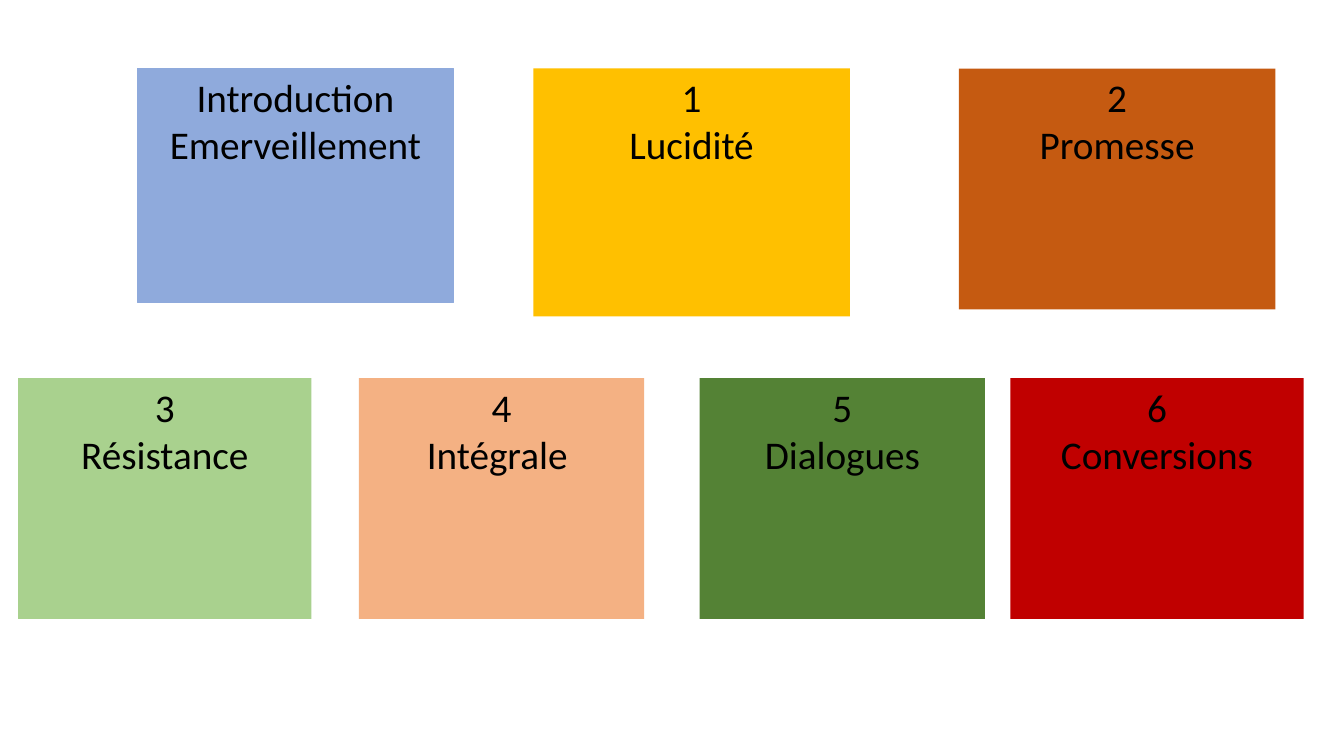
from dataclasses import dataclass

from pptx import Presentation
from pptx.dml.color import RGBColor
from pptx.enum.shapes import MSO_SHAPE
from pptx.enum.text import MSO_ANCHOR, MSO_AUTO_SIZE, PP_ALIGN
from pptx.util import Inches, Pt


@dataclass(frozen=True)
class Theme:
    font: str = "Calibri"
    size: int = 28
    text: str = "000000"
    blue: str = "8FAADC"
    gold: str = "FFC000"
    rust: str = "C55A11"
    mint: str = "A9D18E"
    peach: str = "F4B183"
    green: str = "548235"
    red: str = "C00000"
    outline: float = 0.75


THEME = Theme()
SLIDE_WIDTH, SLIDE_HEIGHT = 13.33, 7.5
BLANK_LAYOUT = 6

# label, title, fill, left, width, height
ROWS = [
    (0.68, [
        ("Introduction", "Emerveillement", THEME.blue, 1.36, 3.14, 2.32),
        ("1", "Lucidité", THEME.gold, 5.29, 3.14, 2.46),
        ("2", "Promesse", THEME.rust, 9.51, 3.14, 2.39),
    ]),
    (3.75, [
        ("3", "Résistance", THEME.mint, 0.18, 2.91, 2.39),
        ("4", "Intégrale ", THEME.peach, 3.56, 2.83, 2.39),
        ("5", "Dialogues", THEME.green, 6.94, 2.83, 2.39),
        ("6", "Conversions", THEME.red, 10.02, 2.91, 2.39),
    ]),
]
OUTLINED = {"Introduction"}


def add_chapter(slide, top, label, title, fill, left, width, height):
    shape = slide.shapes.add_shape(
        MSO_SHAPE.RECTANGLE, Inches(left), Inches(top), Inches(width), Inches(height)
    )
    shape.shadow.inherit = False
    shape.fill.solid()
    shape.fill.fore_color.rgb = RGBColor.from_string(fill)
    if label in OUTLINED:
        shape.line.color.rgb = RGBColor.from_string(fill)
        shape.line.width = Pt(THEME.outline)
    else:
        shape.line.fill.background()

    frame = shape.text_frame
    frame.word_wrap = True
    frame.auto_size = MSO_AUTO_SIZE.NONE
    frame.vertical_anchor = MSO_ANCHOR.TOP
    for paragraph, text in ((frame.paragraphs[0], label), (frame.add_paragraph(), title)):
        paragraph.alignment = PP_ALIGN.CENTER
        run = paragraph.add_run()
        run.text = text
        run.font.name = THEME.font
        run.font.size = Pt(THEME.size)
        run.font.color.rgb = RGBColor.from_string(THEME.text)


def main():
    presentation = Presentation()
    presentation.slide_width = Inches(SLIDE_WIDTH)
    presentation.slide_height = Inches(SLIDE_HEIGHT)
    slide = presentation.slides.add_slide(presentation.slide_layouts[BLANK_LAYOUT])
    for top, chapters in ROWS:
        for chapter in chapters:
            add_chapter(slide, top, *chapter)
    presentation.save("out.pptx")


if __name__ == "__main__":
    main()
